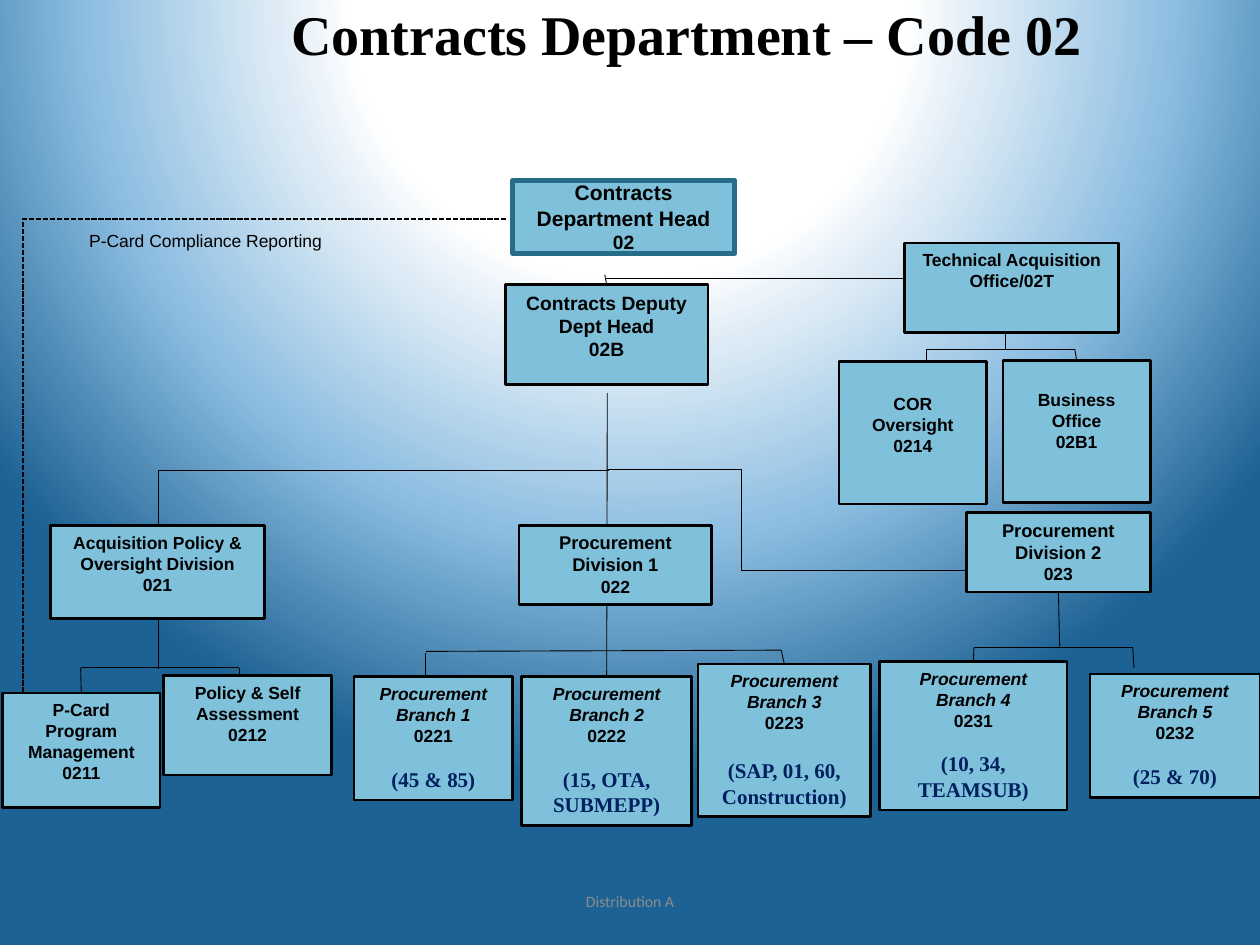
from lxml.etree import SubElement
from pptx import Presentation
from pptx.dml.color import RGBColor
from pptx.enum.dml import MSO_LINE
from pptx.enum.shapes import MSO_CONNECTOR, MSO_SHAPE
from pptx.enum.text import MSO_ANCHOR, PP_ALIGN
from pptx.oxml import parse_xml
from pptx.oxml.ns import nsdecls, qn
from pptx.util import Inches, Pt

BLACK, NAVY, GREY = "000000", "002060", "8C8C8C"
SKY, TEAL = "7FC1DB", "266D8A"
STOPS = [(0, "FFFFFF"), (35, "FFFFFF"), (46, "DBEAF5"),
         (69, "8DBEE1"), (100, "1D6294")]


def color(code):
    return RGBColor.from_string(code)


def paint_back(slide):
    """Fill the background with a round gradient centred above the slide."""
    stops = "".join(
        f'<a:gs pos="{pos * 1000}"><a:srgbClr val="{code}"/></a:gs>'
        for pos, code in STOPS)
    back = parse_xml(
        f'<p:bg {nsdecls("p", "a")}><p:bgPr><a:gradFill rotWithShape="1">'
        f'<a:gsLst>{stops}</a:gsLst><a:path path="circle">'
        '<a:fillToRect l="50000" t="-80000" r="50000" b="180000"/></a:path>'
        '</a:gradFill><a:effectLst/></p:bgPr></p:bg>')
    slide.element.cSld.insert(0, back)


def style(para, size, face="Arial", code=BLACK, bold=True, italic=False):
    for run in para.runs:
        font = run.font
        font.size, font.name = Pt(size), face
        font.bold, font.italic = bold, italic
        font.color.rgb = color(code)


def label(slide, text, at, size, face, code=BLACK, bold=False,
          align=PP_ALIGN.CENTER, anchor=MSO_ANCHOR.MIDDLE, wrap=True):
    frame = slide.shapes.add_textbox(*map(Inches, at)).text_frame
    frame.word_wrap = wrap
    frame.vertical_anchor = anchor
    frame.text = text
    para = frame.paragraphs[0]
    para.alignment = align
    style(para, size, face, code, bold)
    return para


def box(slide, lines, at, size=10, last=None, edge=BLACK, width=1.5):
    """Draw a unit; last is the size of its code line."""
    shape = slide.shapes.add_shape(MSO_SHAPE.RECTANGLE, *map(Inches, at))
    shape.shadow.inherit = False
    shape.fill.solid()
    shape.fill.fore_color.rgb = color(SKY)
    shape.line.color.rgb = color(edge)
    shape.line.width = Pt(width)
    frame = shape.text_frame
    frame.word_wrap = True
    frame.vertical_anchor = MSO_ANCHOR.TOP
    frame.text = "\n".join(lines)
    for para in frame.paragraphs:
        para.alignment = PP_ALIGN.CENTER
        style(para, size)
    if last:
        style(frame.paragraphs[-1], last)
    return shape


def center(shape, top, base):
    frame = shape.text_frame
    frame.vertical_anchor = MSO_ANCHOR.MIDDLE
    frame.margin_top, frame.margin_bottom = Inches(top), Inches(base)


def branch(slide, num, code, duty, at, gap=11.5):
    lines = ["Procurement", f"Branch {num}", code, duty]
    shape = box(slide, lines, at)
    paras = shape.text_frame.paragraphs
    for para in paras[:2]:
        style(para, 10, italic=True)
    style(paras[3], 12, "Times New Roman", NAVY)
    paras[3].space_before = Pt(gap)
    return shape


def link(slide, ends, width=0.5, bend=None):
    """Draw a line; bend is the share of its run before an elbow turns."""
    kind = MSO_CONNECTOR.STRAIGHT if bend is None else MSO_CONNECTOR.ELBOW
    wire = slide.shapes.add_connector(kind, *map(Inches, ends))
    wire.line.color.rgb = color(BLACK)
    wire.line.width = Pt(width)
    props = wire._element.spPr
    SubElement(props, qn("a:effectLst"))
    if bend is not None:
        guides = props.find(qn("a:prstGeom")).get_or_add_avLst()
        SubElement(guides, qn("a:gd"), name="adj1",
                   fmla=f"val {round(bend * 100000)}")
    return wire


def main():
    deck = Presentation()
    deck.slide_width, deck.slide_height = Inches(10), Inches(7.5)
    slide = deck.slides.add_slide(deck.slide_layouts[6])
    paint_back(slide)

    title = label(slide, "Contracts Department – Code 02",
                  (1.58, 0, 7.74, 0.6), 32, "Times New Roman", bold=True)
    title.line_spacing = 0.9

    # Lines, behind the boxes
    for ends in [
        (4.81, 2.21, 7.41, 2.21),                            # technical office
        (7.98, 2.63, 7.98, 2.78), (7.35, 2.77, 8.53, 2.77),
        (7.35, 2.77, 7.35, 3.59),
        (1.26, 3.73, 4.83, 3.73), (1.26, 3.73, 1.26, 5.31),  # policy
        (0.64, 5.3, 1.9, 5.3), (1.9, 5.3, 1.9, 5.52),
        (3.38, 5.17, 6.2, 5.16), (3.38, 5.18, 3.38, 5.4),    # division 1
        (7.73, 5.14, 8.99, 5.14), (8.99, 5.14, 9, 5.3),      # division 2
    ]:
        link(slide, ends)
    link(slide, (4.82, 3.73, 7.94, 4.53), bend=0.34)
    report = link(slide, (4.02, 1.74, 0.18, 6.11), 1, bend=0.999)
    report.line.dash_style = MSO_LINE.SQUARE_DOT

    # Lines that join a box
    to_deputy = link(slide, (4.8, 2.18, 4.8, 2.26))
    to_biz = link(slide, (8.53, 2.77, 8.53, 2.86))
    to_card = link(slide, (0.64, 5.3, 0.64, 5.5))
    trunk = link(slide, (4.82, 3.12, 4.82, 5.37))
    to_three = link(slide, (6.2, 5.16, 6.2, 5.27))
    to_four = link(slide, (7.73, 5.14, 7.73, 5.25))
    stem = link(slide, (8.41, 4.7, 8.41, 5.13))

    # Heads
    head = box(slide, ["Contracts Department Head", "02"],
               (4.07, 1.43, 1.76, 0.58), 12, 11, TEAL, 3)
    center(head, 0, 0)
    deputy = box(slide, ["Contracts Deputy Dept Head", "02B"],
                 (4.01, 2.26, 1.61, 0.79), 11)

    # Policy side
    box(slide, ["Acquisition Policy & Oversight Division", "021"],
        (0.4, 4.17, 1.7, 0.74))
    card = box(slide, ["P-Card Program Management", "0211"],
               (0.02, 5.5, 1.25, 0.91))
    box(slide, ["Policy & Self Assessment", "0212"], (1.3, 5.36, 1.33, 0.79))
    label(slide, "P-Card Compliance Reporting", (0.61, 1.78, 2.07, 0.27), 10,
          "Arial", align=PP_ALIGN.LEFT, anchor=MSO_ANCHOR.TOP, wrap=False)

    # Technical office
    box(slide, ["Technical Acquisition Office/02T"], (7.18, 1.93, 1.7, 0.71))
    cor = box(slide, ["COR", "Oversight", "0214"], (6.66, 2.87, 1.17, 1.13))
    center(cor, 0.05, 0.18)
    biz = box(slide, ["Business Office", "02B1"], (7.96, 2.86, 1.17, 1.13))
    center(biz, 0.05, 0.22)

    # Divisions and branches
    box(slide, ["Procurement Division 1", "022"],
        (4.12, 4.17, 1.53, 0.63), 10.5, 10)
    second = box(slide, ["Procurement Division 2", "023"],
                 (7.67, 4.07, 1.46, 0.63), 10.5, 10)
    branch(slide, 1, "0221", "(45 & 85)", (2.81, 5.37, 1.26, 0.98))
    two = branch(slide, 2, "0222", "(15, OTA, SUBMEPP)",
                 (4.14, 5.37, 1.35, 1.18))
    three = branch(slide, 3, "0223", "(SAP, 01, 60, Construction)",
                   (5.54, 5.27, 1.37, 1.21), 14)
    four = branch(slide, 4, "0231", "(10, 34, TEAMSUB)",
                  (6.98, 5.25, 1.49, 1.18))
    branch(slide, 5, "0232", "(25 & 70)", (8.65, 5.35, 1.35, 0.98))

    # Joins
    for wire, shape in [(to_deputy, deputy), (to_biz, biz), (to_card, card),
                        (trunk, two), (to_three, three), (to_four, four)]:
        wire.end_connect(shape, 0)
    stem.begin_connect(second, 2)

    label(slide, "Distribution A", (3.31, 6.95, 3.38, 0.4), 9, "Calibri", GREY)
    deck.save("out.pptx")


if __name__ == "__main__":
    main()
